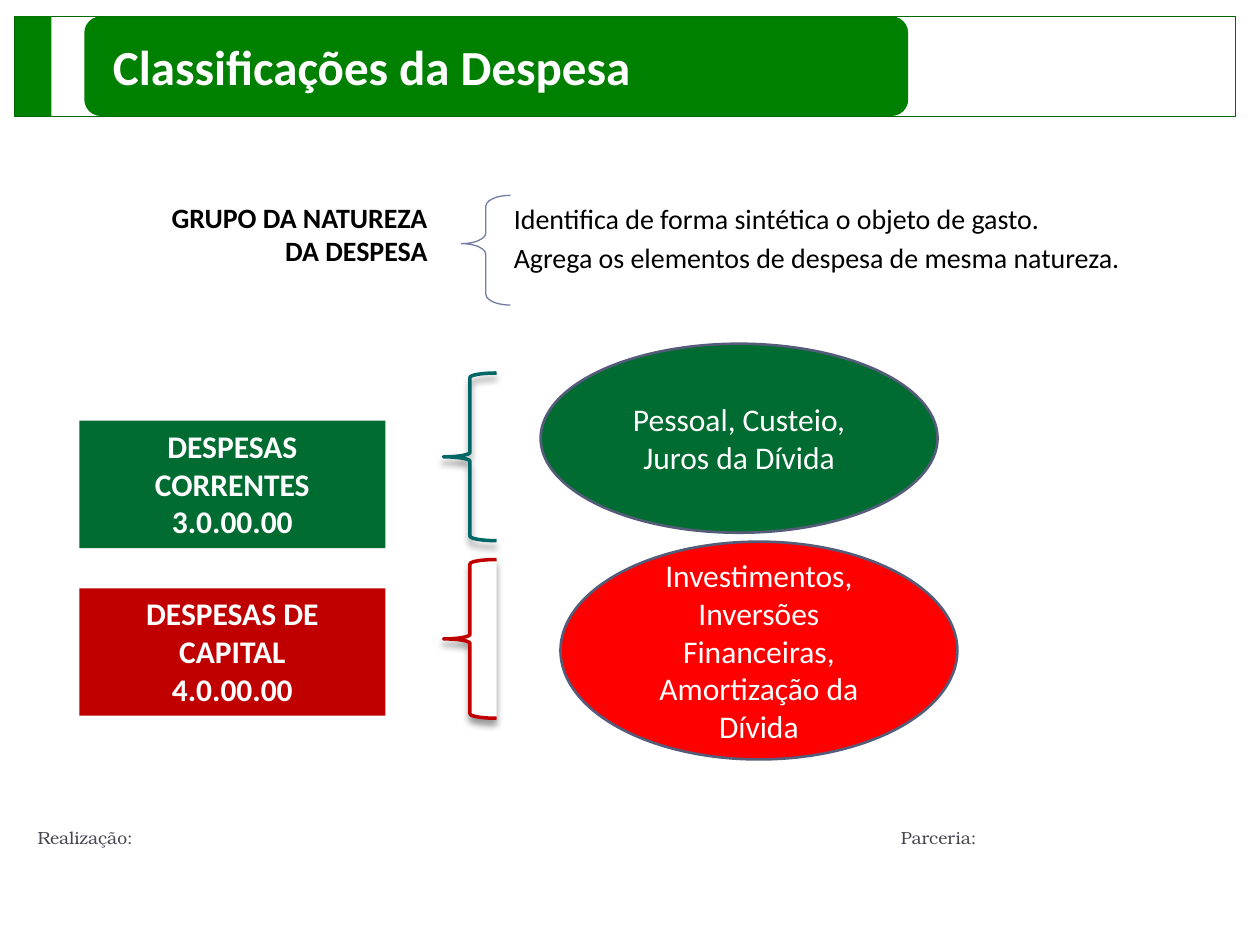
from dataclasses import dataclass
from typing import Optional

from lxml.etree import SubElement
from pptx import Presentation
from pptx.dml.color import RGBColor
from pptx.enum.shapes import MSO_SHAPE
from pptx.enum.text import MSO_ANCHOR, PP_ALIGN
from pptx.oxml.ns import qn
from pptx.util import Cm, Pt

WHITE = RGBColor(0xFF, 0xFF, 0xFF)
BLACK = RGBColor(0x00, 0x00, 0x00)
GREEN = RGBColor(0x00, 0x80, 0x00)
FRAME_GREEN = RGBColor(0x00, 0x66, 0x00)
DARK_GREEN = RGBColor(0x00, 0x6C, 0x31)
TEAL = RGBColor(0x00, 0x66, 0x66)
CRIMSON = RGBColor(0xC0, 0x00, 0x00)
RED = RGBColor(0xFF, 0x00, 0x00)
SLATE = RGBColor(0x54, 0x5C, 0x79)
LAVENDER = RGBColor(0x72, 0x7C, 0xA3)
GREY = RGBColor(0x46, 0x46, 0x53)

HEADER_TOP, HEADER_HEIGHT = 0.33, 2.01


@dataclass
class Box:
    """Position and size in centimetres."""
    left: float
    top: float
    width: float
    height: float

    def lengths(self) -> tuple:
        return Cm(self.left), Cm(self.top), Cm(self.width), Cm(self.height)


@dataclass
class Style:
    size: float
    color: RGBColor
    bold: bool = False
    font: str = "Calibri"
    align: PP_ALIGN = PP_ALIGN.LEFT
    space_before: float = 0


@dataclass
class Category:
    """A kind of expense: its label, its brace and the ellipse of examples."""
    label: list[str]
    label_top: float
    label_fill: RGBColor
    brace: Box
    brace_fill: Optional[RGBColor]
    brace_line: RGBColor
    examples: str
    ellipse: Box
    ellipse_fill: RGBColor


TITLE = Style(28, WHITE, bold=True)
LABEL = Style(18, WHITE, bold=True, align=PP_ALIGN.CENTER)
EXAMPLES = Style(18, WHITE, align=PP_ALIGN.CENTER)
GROUP = Style(16, BLACK, bold=True, align=PP_ALIGN.RIGHT)
DEFINITION = Style(16, BLACK, space_before=3.2)
FOOTER = Style(10, GREY, font="TeX Gyre Bonum")

CATEGORIES = [
    Category(["DESPESAS CORRENTES", "3.0.00.00"], 8.48, DARK_GREEN,
             Box(8.94, 7.52, 1.07, 3.38), None, TEAL,
             "Pessoal, Custeio, Juros da Dívida",
             Box(10.9, 6.93, 8, 3.81), DARK_GREEN),
    Category(["DESPESAS DE CAPITAL", "4.0.00.00"], 11.86, CRIMSON,
             Box(8.94, 11.28, 1.07, 3.2), WHITE, CRIMSON,
             "Investimentos, Inversões Financeiras, Amortização da Dívida",
             Box(11.3, 10.92, 8, 4.39), RED),
]


def add_shape(s, kind: MSO_SHAPE, box: Box, fill: Optional[RGBColor] = None,
              line: Optional[RGBColor] = None, width: float = 1):
    sp = s.shapes.add_shape(kind, *box.lengths())
    sp.shadow.inherit = False
    if fill is None:
        sp.fill.background()
    else:
        sp.fill.solid()
        sp.fill.fore_color.rgb = fill
    if line is None:
        sp.line.fill.background()
    else:
        sp.line.color.rgb = line
        sp.line.width = Pt(width)
    return sp


def add_textbox(s, box: Box, lines: list[str], style: Style):
    sp = s.shapes.add_textbox(*box.lengths())
    write(sp, lines, style)
    return sp


def write(sp, lines: list[str], style: Style,
          anchor: MSO_ANCHOR = MSO_ANCHOR.TOP) -> None:
    """Fill a shape with one paragraph for each line."""
    tf = sp.text_frame
    tf.word_wrap = True
    tf.vertical_anchor = anchor
    for i, line in enumerate(lines):
        p = tf.add_paragraph() if i else tf.paragraphs[0]
        p.alignment = style.align
        if i and style.space_before:
            p.space_before = Pt(style.space_before)
        r = p.add_run()
        r.text = line
        r.font.size = Pt(style.size)
        r.font.name = style.font
        r.font.bold = style.bold
        r.font.color.rgb = style.color


def add_drop_shadow(sp) -> None:
    effects = sp._element.spPr.find(qn("a:effectLst"))
    shadow = SubElement(effects, qn("a:outerShdw"), blurRad=str(Pt(4)),
                        dist=str(Pt(3.4)), dir="5400000", rotWithShape="0")
    color = SubElement(shadow, qn("a:srgbClr"), val="000000")
    SubElement(color, qn("a:alpha"), val="40000")


def add_header(s) -> None:
    add_shape(s, MSO_SHAPE.RECTANGLE, Box(0.3, HEADER_TOP, 24.61, HEADER_HEIGHT),
              line=FRAME_GREEN, width=0.5)
    add_shape(s, MSO_SHAPE.RECTANGLE, Box(0.3, HEADER_TOP, 0.74, HEADER_HEIGHT), GREEN)
    title = add_shape(s, MSO_SHAPE.ROUNDED_RECTANGLE,
                      Box(1.7, HEADER_TOP, 16.61, HEADER_HEIGHT), GREEN)
    write(title, ["Classificações da Despesa"], TITLE, MSO_ANCHOR.MIDDLE)
    title.text_frame.margin_left = Cm(0.48)


def add_definition(s) -> None:
    group = add_textbox(s, Box(1.3, 3.91, 7.7, 2.39),
                        ["GRUPO DA NATUREZA", "DA DESPESA"], GROUP)
    group.text_frame.margin_right = Cm(0.38)
    brace = add_shape(s, MSO_SHAPE.LEFT_BRACE, Box(9.3, 3.94, 0.99, 2.21),
                      line=LAVENDER, width=0.75)
    brace.adjustments[0] = 0.22
    brace.adjustments[1] = 0.44
    text = add_textbox(s, Box(9.09, 3.94, 16.31, 2.54),
                       ["Identifica de forma sintética o objeto de gasto.",
                        "Agrega os elementos de despesa de mesma natureza."],
                       DEFINITION)
    for p in text.text_frame.paragraphs:
        pPr = p._p.get_or_add_pPr()
        pPr.set("marL", str(Cm(0.97)))
        pPr.set("indent", str(Cm(0.05)))


def add_category(s, c: Category) -> None:
    brace = add_shape(s, MSO_SHAPE.LEFT_BRACE, c.brace, c.brace_fill, c.brace_line, 2)
    add_drop_shadow(brace)
    label = add_shape(s, MSO_SHAPE.RECTANGLE, Box(1.6, c.label_top, 6.17, 2.57),
                      c.label_fill)
    write(label, c.label, LABEL)
    ellipse = add_shape(s, MSO_SHAPE.OVAL, c.ellipse, c.ellipse_fill, SLATE, 1.5)
    write(ellipse, [c.examples], EXAMPLES, MSO_ANCHOR.MIDDLE)


def add_footer(s) -> None:
    sp = add_textbox(s, Box(0.51, 16.54, 24.26, 0.79),
                     ["Realização:\tParceria:"], FOOTER)
    pPr = sp.text_frame.paragraphs[0]._p.get_or_add_pPr()
    tabs = SubElement(pPr, qn("a:tabLst"))
    SubElement(tabs, qn("a:tab"), pos=str(Cm(17.4)), algn="l")


def main() -> None:
    prs = Presentation()
    prs.slide_width, prs.slide_height = Cm(25.4), Cm(19.05)
    s = prs.slides.add_slide(prs.slide_layouts[6])
    add_header(s)
    add_footer(s)
    add_definition(s)
    for category in CATEGORIES:
        add_category(s, category)
    prs.save("out.pptx")


if __name__ == "__main__":
    main()
